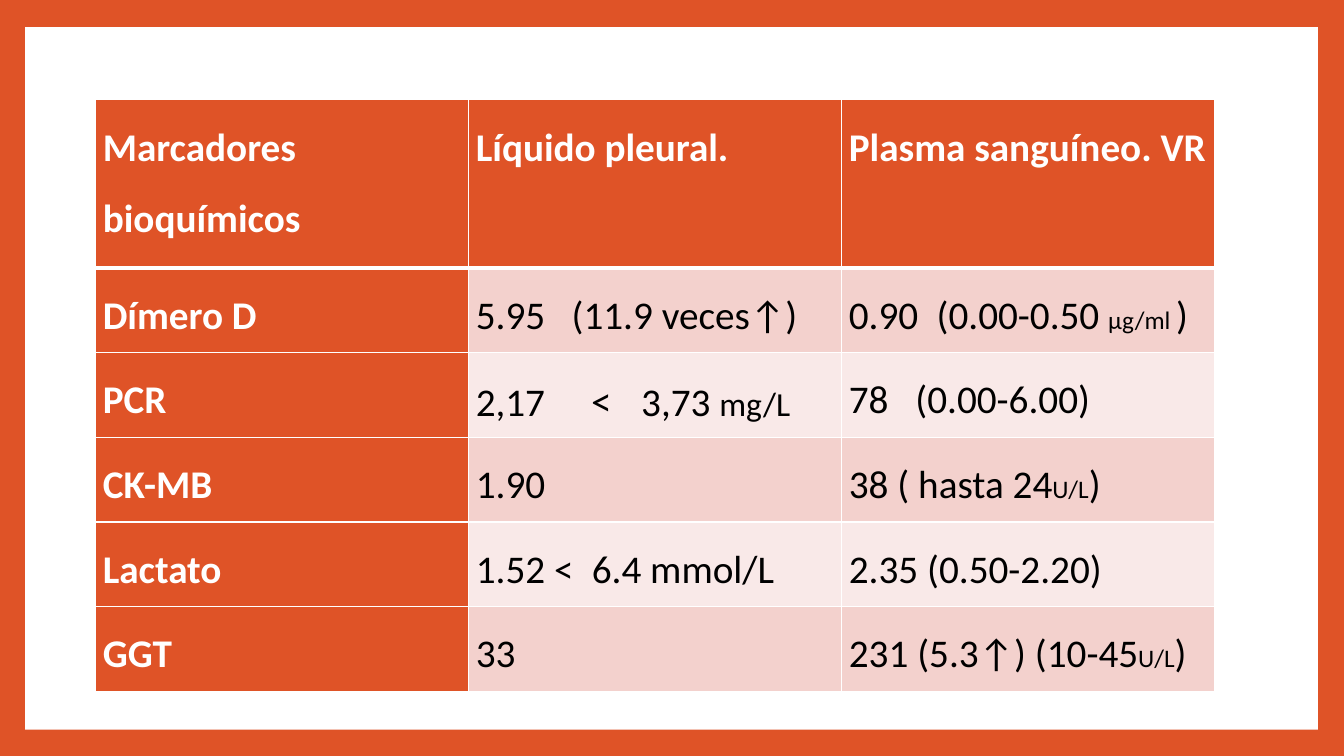
from dataclasses import dataclass

from lxml.etree import SubElement
from pptx import Presentation
from pptx.dml.color import RGBColor
from pptx.enum.shapes import MSO_SHAPE
from pptx.enum.text import PP_ALIGN
from pptx.oxml.ns import qn
from pptx.table import _Cell
from pptx.util import Inches, Pt

COLORS = {
    "orange": "DF5327",
    "white": "FFFFFF",
    "black": "000000",
    "band_dark": "F3D1CD",
    "band_light": "F9E9E8",
}
SLIDE_W, SLIDE_H = Inches(13.33), Inches(7.5)
COLUMN_W = Inches(3.7)
HEADER_H, MARKER_H = Inches(1.67), Inches(0.84)
CELL_MARGIN = Inches(0.07)


@dataclass(frozen=True)
class Piece:
    text: str
    size: int = 28
    font: str = "Calibri"


@dataclass(frozen=True)
class Entry:
    pieces: tuple[Piece, ...]
    tabs: tuple[float, ...] = ()  # tab stops in inches


@dataclass(frozen=True)
class Marker:
    name: str
    pleural: Entry
    plasma: Entry


def entry(*pieces: Piece | str, tabs: tuple[float, ...] = ()) -> Entry:
    return Entry(tuple(Piece(p) if isinstance(p, str) else p for p in pieces), tabs)


UNITS = Piece("U/L", 18)
HEADERS = ("Marcadores bioquímicos", "Líquido pleural.", "Plasma sanguíneo. VR")
MARKERS = (
    Marker("Dímero D",
           entry("5.95\t(11.9 veces↑)", tabs=(0.95,)),
           entry("0.90\t(0.00-0.50 ", Piece("µg/ml ", 18), ")", tabs=(0.87,))),
    Marker("PCR",
           entry("2,17\t", Piece("<\t", font="Lato"), "3,73 ", Piece("mg/L", 24),
                 tabs=(1.13, 1.64)),
           entry("78\t(0.00-6.00)", tabs=(0.66,))),
    Marker("CK-MB", entry("1.90"), entry("38 ( hasta 24", UNITS, ")")),
    Marker("Lactato",
           entry("1.52 <\t6.4 mmol/L", tabs=(1.15,)),
           entry("2.35 (0.50-2.20)")),
    Marker("GGT", entry("33"), entry("231 (5.3↑) (10-45", UNITS, ")")),
)


def rgb(name: str) -> RGBColor:
    return RGBColor.from_string(COLORS[name])


def draw_borders(cell: _Cell, top: float, bottom: float) -> None:
    properties = cell._tc.get_or_add_tcPr()
    for side, points in (("L", 1), ("R", 1), ("T", top), ("B", bottom)):
        border = SubElement(properties, qn(f"a:ln{side}"), w=str(Pt(points)))
        fill = SubElement(border, qn("a:solidFill"))
        SubElement(fill, qn("a:srgbClr"), val=COLORS["white"])


def fill_cell(cell: _Cell, content: Entry, fill: str, emphasis: bool,
              top: float, bottom: float) -> None:
    draw_borders(cell, top, bottom)
    cell.fill.solid()
    cell.fill.fore_color.rgb = rgb(fill)
    cell.margin_left = cell.margin_right = CELL_MARGIN
    cell.margin_top = cell.margin_bottom = 0
    paragraph = cell.text_frame.paragraphs[0]
    paragraph.alignment = PP_ALIGN.JUSTIFY
    paragraph.line_spacing = 1.5
    if content.tabs:
        stops = SubElement(paragraph._p.get_or_add_pPr(), qn("a:tabLst"))
        for stop in content.tabs:
            SubElement(stops, qn("a:tab"), pos=str(Inches(stop)), algn="l")
    for piece in content.pieces:
        run = paragraph.add_run()
        run.text = piece.text
        run.font.size = Pt(piece.size)
        run.font.name = piece.font
        run.font.bold = emphasis
        run.font.color.rgb = rgb("white" if emphasis else "black")


def main() -> None:
    presentation = Presentation()
    presentation.slide_width, presentation.slide_height = SLIDE_W, SLIDE_H
    slide = presentation.slides.add_slide(presentation.slide_layouts[6])

    # Orange background with a white panel
    slide.background.fill.solid()
    slide.background.fill.fore_color.rgb = rgb("orange")
    panel = slide.shapes.add_shape(MSO_SHAPE.RECTANGLE, Inches(0.25), Inches(0.27),
                                   Inches(12.82), Inches(6.97))
    panel.shadow.inherit = False
    panel.fill.solid()
    panel.fill.fore_color.rgb = rgb("white")
    panel.line.fill.background()

    # Table of biochemical markers
    rows = [tuple(entry(header) for header in HEADERS)]
    rows += [(entry(m.name), m.pleural, m.plasma) for m in MARKERS]
    markers = slide.shapes.add_table(
        len(rows), len(HEADERS), Inches(0.95), Inches(0.99),
        COLUMN_W * len(HEADERS), HEADER_H + MARKER_H * len(MARKERS)).table
    for column in markers.columns:
        column.width = COLUMN_W
    for r, contents in enumerate(rows):
        markers.rows[r].height = MARKER_H if r else HEADER_H
        band = "band_dark" if r % 2 else "band_light"
        for c, content in enumerate(contents):
            emphasis = r == 0 or c == 0
            fill_cell(markers.cell(r, c), content, "orange" if emphasis else band,
                      emphasis, top=3 if r == 1 else 1, bottom=3 if r == 0 else 1)

    presentation.save("out.pptx")


if __name__ == "__main__":
    main()
